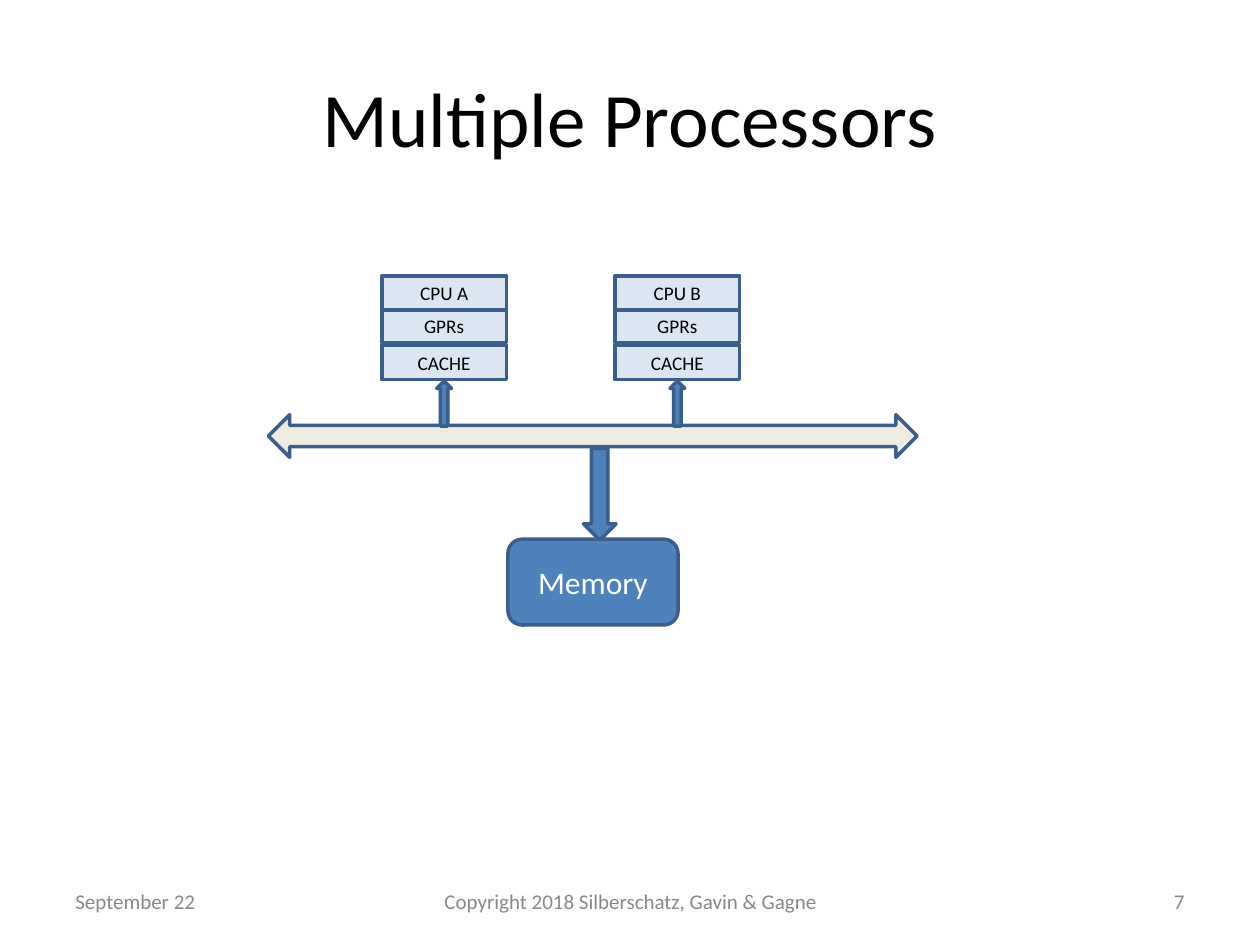
import pptx
import pptx.dml.color
import pptx.enum.shapes
import pptx.enum.text
import pptx.util

Cm = pptx.util.Cm
Pt = pptx.util.Pt
SHAPE = pptx.enum.shapes.MSO_SHAPE
ALIGN = pptx.enum.text.PP_ALIGN

COLORS = {
    "black": "000000",
    "white": "FFFFFF",
    "gray": "898989",
    "edge": "3A5F8C",
    "blue": "4F81BD",
    "pale": "DCE6F2",
    "cream": "EEECE1",
}


def color(name):
    return pptx.dml.color.RGBColor.from_string(COLORS[name])


def write(shape, text, size, ink, align=ALIGN.CENTER):
    """Put one middle-anchored paragraph into the shape."""
    frame = shape.text_frame
    frame.word_wrap = True
    frame.vertical_anchor = pptx.enum.text.MSO_ANCHOR.MIDDLE
    line = frame.paragraphs[0]
    line.text = text
    line.alignment = align
    line.font.name = "Calibri"
    line.font.size = Pt(size)
    line.font.color.rgb = color(ink)


def add_label(slide, box, text, size, ink, align):
    label = slide.shapes.add_textbox(*map(Cm, box))
    write(label, text, size, ink, align)


def add_block(slide, kind, box, fill):
    block = slide.shapes.add_shape(kind, *map(Cm, box))
    block.shadow.inherit = False
    block.fill.solid()
    block.fill.fore_color.rgb = color(fill)
    block.line.color.rgb = color("edge")
    block.line.width = Pt(2)
    return block


def add_cpu(slide, left, name):
    """Stack the three parts of a processor above its arrow to the bus."""
    width = 2.51
    for text, top in (("GPRs", 6.22), ("CACHE", 6.96), (name, 5.56)):
        part = add_block(slide, SHAPE.RECTANGLE, (left, top, width, 0.69), "pale")
        write(part, text, 11, "black")
    thick = 0.3
    middle = left + (width - thick) / 2
    add_block(slide, SHAPE.UP_ARROW, (middle, 7.68, thick, 0.91), "blue")


def main():
    deck = pptx.Presentation()
    deck.slide_width, deck.slide_height = Cm(25.4), Cm(19.05)
    slide = deck.slides.add_slide(deck.slide_layouts[6])

    add_label(slide, (1.27, 0.76, 22.86, 3.18), "Multiple Processors",
              44, "black", ALIGN.CENTER)
    for left, width, text, align in (
        (1.27, 5.92, "September 22", ALIGN.LEFT),
        (8.69, 8.05, "Copyright 2018 Silberschatz, Gavin & Gagne", ALIGN.CENTER),
        (18.21, 5.92, "7", ALIGN.RIGHT),
    ):
        add_label(slide, (left, 17.65, width, 1.02), text, 12, "gray", align)

    add_block(slide, SHAPE.LEFT_RIGHT_ARROW, (5.41, 8.36, 13.08, 0.86), "cream")
    add_cpu(slide, 7.7, "CPU A")
    add_cpu(slide, 12.4, "CPU B")

    store = add_block(slide, SHAPE.ROUNDED_RECTANGLE,
                      (10.24, 10.87, 3.43, 1.73), "blue")
    write(store, "Memory", 18, "white")
    add_block(slide, SHAPE.DOWN_ARROW, (11.76, 9.04, 0.66, 1.85), "blue")

    deck.save("out.pptx")


if __name__ == "__main__":
    main()
